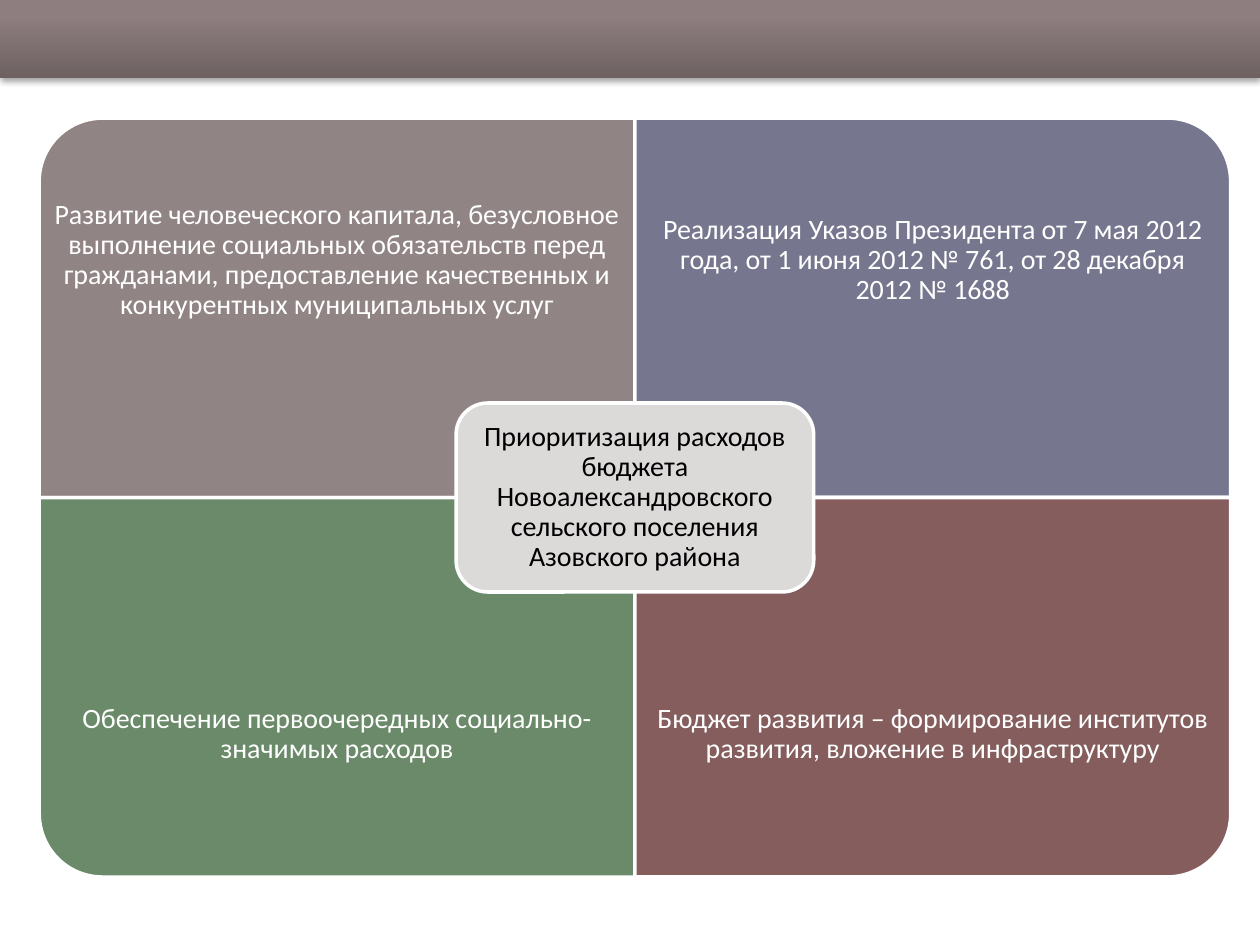
from copy import deepcopy

from pptx import Presentation
from pptx.dml.color import RGBColor
from pptx.enum.shapes import MSO_SHAPE as Preset
from pptx.enum.text import MSO_ANCHOR as Anchor, PP_ALIGN as Align
from pptx.oxml import parse_xml
from pptx.oxml.ns import nsdecls
from pptx.util import Cm, Pt

COLORS = {
    "band_dark": "6E6162",
    "band_mid": "8E7E7F",
    "band_light": "8F7E80",
    "taupe": "918485",
    "slate": "76778E",
    "green": "6A8A69",
    "brick": "855D5D",
    "hub": "DCD9D9",
    "white": "FFFFFF",
    "black": "000000",
}

SLIDE_WIDTH, SLIDE_HEIGHT = 25.4, 19.05
CENTER_X, CENTER_Y = 12.8, 10.03
QUADRANT_WIDTH, QUADRANT_HEIGHT = 12.01, 7.65
LABEL_HEIGHT = QUADRANT_HEIGHT * 0.75
HUB_WIDTH, HUB_HEIGHT = 7.21, 3.81

# column, row, rotation that puts the round corner outside, colour, label
QUADRANTS = [
    (0, 0, 270, "taupe",
     "Развитие человеческого капитала, безусловное выполнение социальных "
     "обязательств перед гражданами, предоставление качественных и "
     "конкурентных муниципальных услуг"),
    (1, 0, 0, "slate",
     "Реализация Указов Президента от 7 мая 2012 года, от 1 июня 2012 № 761, "
     "от 28 декабря 2012 № 1688"),
    (0, 1, 180, "green",
     "Обеспечение первоочередных социально-значимых расходов"),
    (1, 1, 90, "brick",
     "Бюджет развития – формирование институтов развития, вложение в "
     "инфраструктуру"),
]
HUB_TEXT = ("Приоритизация расходов бюджета Новоалександровского сельского "
            "поселения Азовского района")


def rgb(name):
    return RGBColor.from_string(COLORS[name])


class SlideBuilder:
    font_name = "Calibri"
    font_size = Pt(16)
    line_width = Pt(2)

    def __init__(self, slide):
        self.slide = slide

    def band(self, width, height):
        """Top strip with a vertical gradient and a soft shadow."""
        shape = self.slide.shapes.add_shape(
            Preset.RECTANGLE, 0, 0, Cm(width), Cm(height))
        shape.line.fill.background()
        shape.fill.gradient()
        shape.fill.gradient_angle = 90
        stop_list = shape.element.xpath(".//a:gsLst")[0]
        stop_list.append(deepcopy(stop_list[-1]))
        stops = zip(shape.fill.gradient_stops, (0, 0.8, 1),
                    ("band_dark", "band_mid", "band_light"))
        for stop, position, color in stops:
            stop.position = position
            stop.color.rgb = rgb(color)
        shape.element.spPr.append(parse_xml(
            f'<a:effectLst {nsdecls("a")}>'
            f'<a:outerShdw blurRad="{Pt(3.1)}" dist="{Pt(1.8)}" dir="5400000">'
            f'<a:srgbClr val="{COLORS["black"]}"><a:alpha val="35000"/>'
            '</a:srgbClr></a:outerShdw></a:effectLst>'))

    def block(self, preset, center_x, center_y, width, height, color,
              rotation=0):
        """Filled shape placed by its centre; width and height are as seen."""
        if rotation in (90, 270):
            width, height = height, width
        shape = self.slide.shapes.add_shape(
            preset, Cm(center_x - width / 2), Cm(center_y - height / 2),
            Cm(width), Cm(height))
        shape.rotation = rotation
        shape.shadow.inherit = False
        shape.fill.solid()
        shape.fill.fore_color.rgb = rgb(color)
        shape.line.color.rgb = rgb("white")
        shape.line.width = self.line_width
        return shape

    def add_text(self, shape, text, color, inset):
        frame = shape.text_frame
        frame.word_wrap = True
        frame.vertical_anchor = Anchor.MIDDLE
        frame.margin_left = frame.margin_right = Cm(inset)
        frame.margin_top = frame.margin_bottom = Cm(inset)
        paragraph = frame.paragraphs[0]
        paragraph.alignment = Align.CENTER
        paragraph.line_spacing = 0.9
        run = paragraph.add_run()
        run.text = text
        run.font.name = self.font_name
        run.font.size = self.font_size
        run.font.color.rgb = rgb(color)

    def quadrant(self, column, row, rotation, color, text):
        left = CENTER_X + (column - 1) * QUADRANT_WIDTH
        top = CENTER_Y + (row - 1) * QUADRANT_HEIGHT
        self.block(Preset.ROUND_1_RECTANGLE, left + QUADRANT_WIDTH / 2,
                   top + QUADRANT_HEIGHT / 2, QUADRANT_WIDTH, QUADRANT_HEIGHT,
                   color, rotation)
        label_top = top + row * (QUADRANT_HEIGHT - LABEL_HEIGHT)
        label = self.slide.shapes.add_textbox(
            Cm(left), Cm(label_top), Cm(QUADRANT_WIDTH), Cm(LABEL_HEIGHT))
        self.add_text(label, text, "white", 0.3)

    def hub(self, text):
        shape = self.block(Preset.ROUNDED_RECTANGLE, CENTER_X, CENTER_Y,
                           HUB_WIDTH, HUB_HEIGHT, "hub")
        self.add_text(shape, text, "black", 0.18)


def main():
    presentation = Presentation()
    presentation.slide_width = Cm(SLIDE_WIDTH)
    presentation.slide_height = Cm(SLIDE_HEIGHT)
    blank_layout = presentation.slide_layouts[6]
    builder = SlideBuilder(presentation.slides.add_slide(blank_layout))
    builder.band(SLIDE_WIDTH, 1.58)
    for quadrant in QUADRANTS:
        builder.quadrant(*quadrant)
    builder.hub(HUB_TEXT)
    presentation.save("out.pptx")


if __name__ == "__main__":
    main()
